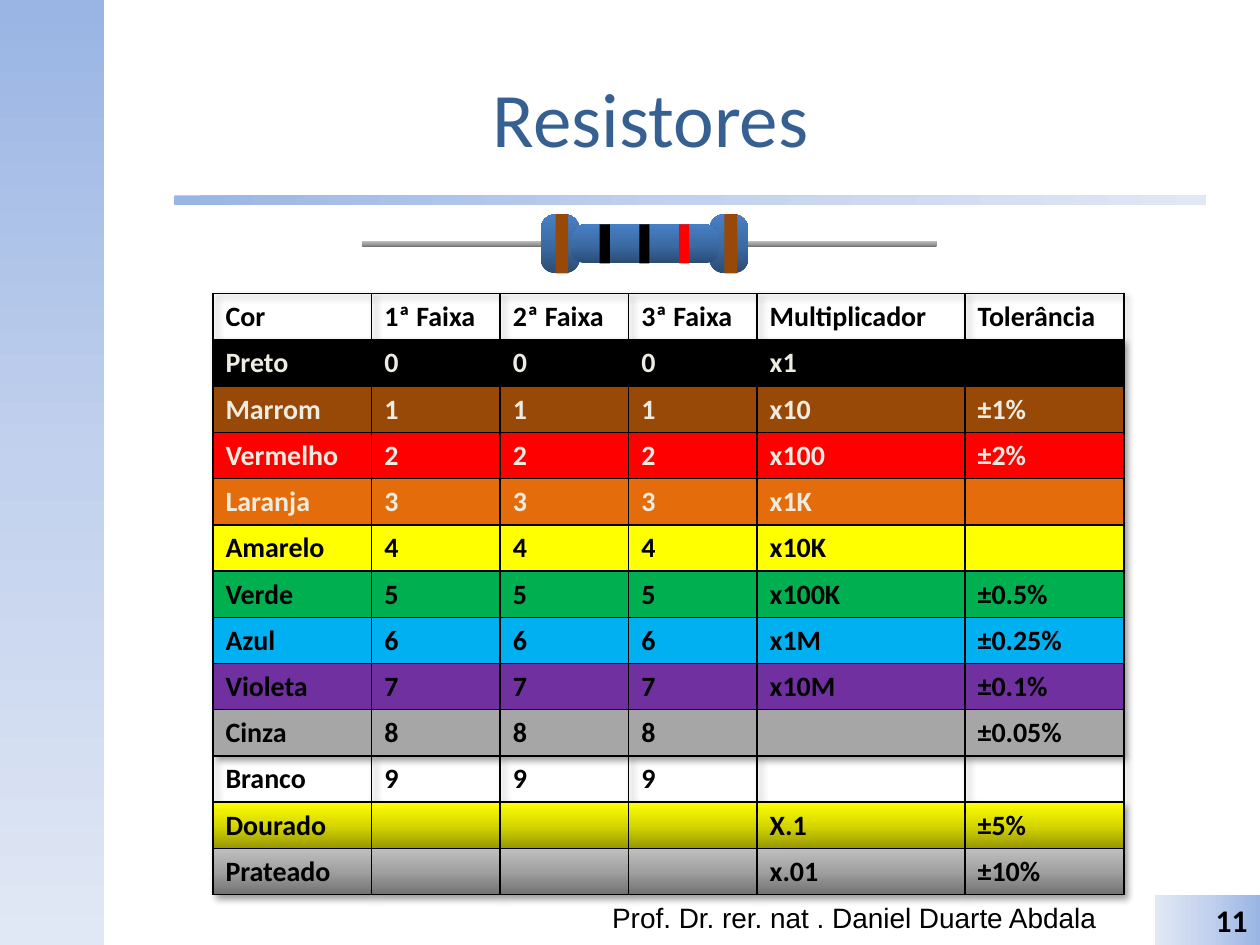
from lxml import etree
from pptx import Presentation
from pptx.dml.color import RGBColor
from pptx.enum.shapes import MSO_SHAPE as SHAPE
from pptx.enum.text import MSO_ANCHOR as ANCHOR, PP_ALIGN as ALIGN
from pptx.oxml import parse_xml
from pptx.oxml.ns import nsdecls, qn
from pptx.util import Inches, Pt

W, H = Inches(10), Inches(7.5)
PALE = ("9AB5E4", "C2D1ED", "E1E8F5")
STEEL = ("717171", "A1A1A1", "BFBFBF")
GOLD = ("979700", "D7D700", "FFFF00")
BLUE = ("2A4C75", "3C6CA6", "4780C5")
BLACK, CREAM, BROWN, RED = "000000", "EEECE1", "984807", "FF0000"

COLUMNS = [12.6, 10.2, 10.2, 10.2, 16.5, 12.6]
HEADER = ["Cor", "1ª Faixa", "2ª Faixa", "3ª Faixa", "Multiplicador", "Tolerância"]
# name, digit, multiplier, tolerance, fill, text colour
CODES = [
    ("Preto", "0", "x1", "", BLACK, CREAM),
    ("Marrom", "1", "x10", "±1%", BROWN, CREAM),
    ("Vermelho", "2", "x100", "±2%", RED, CREAM),
    ("Laranja", "3", "x1K", "", "E46C0A", CREAM),
    ("Amarelo", "4", "x10K", "", "FFFF00", BLACK),
    ("Verde", "5", "x100K", "±0.5%", "00B050", BLACK),
    ("Azul", "6", "x1M", "±0.25%", "00B0F0", BLACK),
    ("Violeta", "7", "x10M", "±0.1%", "7030A0", BLACK),
    ("Cinza", "8", "", "±0.05%", "A6A6A6", BLACK),
    ("Branco", "9", "", "", None, BLACK),
    ("Dourado", "", "X.1", "±5%", GOLD, BLACK),
    ("Prateado", "", "x.01", "±10%", STEEL, BLACK),
]


def rgb(color):
    return RGBColor.from_string(color)


def box(x, y, w, h):
    """Turn percentages of the slide's width and height into lengths."""
    return [int(W * x / 100), int(H * y / 100), int(W * w / 100), int(H * h / 100)]


def gradient(colors, angle):
    stops = "".join(f'<a:gs pos="{i * 50000}"><a:srgbClr val="{c}"/></a:gs>'
                    for i, c in enumerate(colors))
    return parse_xml(f'<a:gradFill {nsdecls("a")} rotWithShape="1"><a:gsLst>{stops}</a:gsLst>'
                     f'<a:lin ang="{angle * 60000}" scaled="0"/></a:gradFill>')


def paint(fill, element, color, angle=270):
    """Fill with nothing, one colour, or a gradient of three colours."""
    if color is None:
        fill.background()
    elif isinstance(color, str):
        fill.solid()
        fill.fore_color.rgb = rgb(color)
    else:
        fill.gradient()
        old = next(element.iter(qn("a:gradFill")))
        old.getparent().replace(old, gradient(color, angle))


def add_block(shapes, kind, bounds, color, angle=270, adj=None):
    s = shapes.add_shape(kind, *box(*bounds))
    s.shadow.inherit = False
    s.line.fill.background()
    paint(s.fill, s._element, color, angle)
    if adj is not None:
        s.adjustments[0] = adj
    return s


def write(tf, text, size, color=BLACK, font="Calibri", bold=False, align=ALIGN.LEFT):
    p = tf.paragraphs[0]
    p.alignment = align
    r = p.add_run()
    r.text = text
    r.font.size, r.font.name, r.font.bold = Pt(size), font, bold
    r.font.color.rgb = rgb(color)


def add_text(shapes, bounds, text, size, anchor=ANCHOR.TOP, **style):
    tf = shapes.add_textbox(*box(*bounds)).text_frame
    tf.word_wrap = True
    tf.vertical_anchor = anchor
    write(tf, text, size, **style)


def add_borders(cell):
    tc_pr = cell._tc.get_or_add_tcPr()
    for i, side in enumerate("LRTB"):
        tc_pr.insert(i, parse_xml(
            f'<a:ln{side} {nsdecls("a")} w="12700"><a:solidFill><a:srgbClr val="{BLACK}"/>'
            f'</a:solidFill></a:ln{side}>'))


def fill_cell(cell, text, fill, color):
    paint(cell.fill, cell._tc, fill)
    add_borders(cell)
    if text:
        write(cell.text_frame, text, 16, color, bold=True)
    else:
        end = etree.SubElement(cell.text_frame.paragraphs[0]._p, qn("a:endParaRPr"))
        end.set("sz", "1600")


def add_code_table(shapes):
    rows = [(HEADER, None, BLACK)]
    rows += [([name, digit, digit, digit, factor, tolerance], fill, color)
             for name, digit, factor, tolerance, fill, color in CODES]
    table = shapes.add_table(len(rows), len(COLUMNS),
                             *box(16.9, 31.07, sum(COLUMNS), 63.6)).table
    table.first_row = table.horz_banding = False
    table._tbl.tblPr.insert(0, parse_xml(
        f'<a:effectLst {nsdecls("a")}><a:outerShdw blurRad="50800" dist="38100" dir="2700000">'
        '<a:srgbClr val="000000"><a:alpha val="40000"/></a:srgbClr></a:outerShdw></a:effectLst>'))
    for column, width in zip(table.columns, COLUMNS):
        column.width = int(W * width / 100)
    for i, (texts, fill, color) in enumerate(rows):
        for j, text in enumerate(texts):
            fill_cell(table.cell(i, j), text, fill, color)


def add_resistor(shapes):
    parts = shapes.add_group_shape().shapes
    cap_y, cap_h, body_y, body_h = 22.67, 6.27, 23.73, 4.13
    for bounds, color in [((28.7, 25.47, 45.7, 0.67), STEEL),
                          ((42.9, cap_y, 3.1, cap_h), BLUE),
                          ((56.3, cap_y, 3.1, cap_h), BLUE),
                          ((45.3, body_y, 11.8, body_h), BLUE)]:
        add_block(parts, SHAPE.ROUNDED_RECTANGLE, bounds, color, adj=0.39)
    for x in (44.1, 57.5):
        add_block(parts, SHAPE.RECTANGLE, (x, cap_y, 1, cap_h), BROWN)
    for i, color in enumerate((BLACK, BLACK, RED)):
        add_block(parts, SHAPE.RECTANGLE, (47.6 + i * 3.15, body_y, 0.8, body_h), color)


def add_page_number(shapes, bounds, number):
    s = add_block(shapes, SHAPE.RECTANGLE, bounds, PALE, 180)
    s.text_frame.vertical_anchor = ANCHOR.MIDDLE
    write(s.text_frame, number, 18, bold=True, align=ALIGN.RIGHT)


def main():
    prs = Presentation()
    prs.slide_width, prs.slide_height = W, H
    shapes = prs.slides.add_slide(prs.slide_layouts[6]).shapes
    add_block(shapes, SHAPE.RECTANGLE, (0, 0, 8.3, 100), PALE, 90)
    add_block(shapes, SHAPE.ROUNDED_RECTANGLE, (13.8, 20.67, 81.9, 1.07), PALE, 0)
    add_text(shapes, (8.3, 4, 86.7, 16.67), "Resistores", 44, ANCHOR.MIDDLE,
             color="376092", align=ALIGN.CENTER)
    add_text(shapes, (47.6, 94.67, 41.9, 5.33),
             "Prof. Dr. rer. nat . Daniel Duarte Abdala", 16, font="Arial")
    add_code_table(shapes)
    add_page_number(shapes, (91.7, 94.67, 8.3, 5.33), "11")
    add_resistor(shapes)
    prs.save("out.pptx")


if __name__ == "__main__":
    main()
